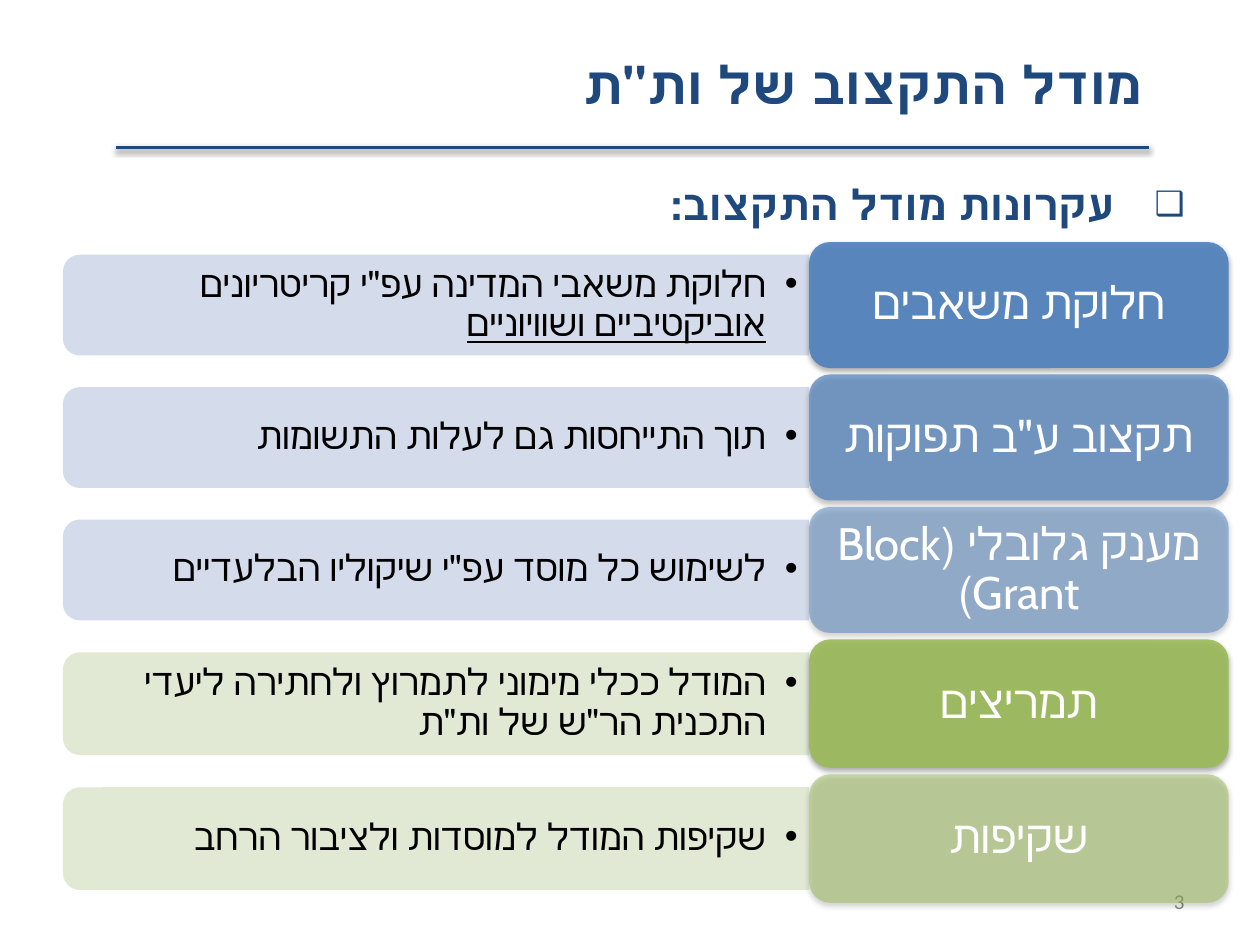
from lxml import etree
from pptx import Presentation
from pptx import util as u
from pptx.dml import color
from pptx.enum import shapes, text
from pptx.oxml import ns

COLORS = {"navy": "1F497D", "blue": "4F81BD", "pale blue": "D0D8E8",
          "green": "9BBB59", "pale green": "DEE7D1",
          "white": "FFFFFF", "black": "000000", "gray": "898989"}


def add_shadow(shape, opacity, distance):
    effects = etree.SubElement(shape._element.spPr, ns.qn("a:effectLst"))
    outer = etree.SubElement(effects, ns.qn("a:outerShdw"), blurRad=str(u.Pt(3.1)),
                             dist=str(u.Pt(distance)), dir="5400000", rotWithShape="0")
    tint = etree.SubElement(outer, ns.qn("a:srgbClr"), val=COLORS["black"])
    etree.SubElement(tint, ns.qn("a:alpha"), val=str(opacity * 1000))


def write(shape, runs, size, ink, align=text.PP_ALIGN.RIGHT, font="Cabin", bold=False,
          rtl=True, bullet=None, bullet_size=100, hang=0, inset=(0.25, 0.13)):
    frame = shape.text_frame
    frame.word_wrap = True
    frame.vertical_anchor = text.MSO_ANCHOR.MIDDLE
    frame.margin_left = frame.margin_right = u.Cm(inset[0])
    frame.margin_top = frame.margin_bottom = u.Cm(inset[1])
    paragraph = frame.paragraphs[0]
    paragraph.alignment = align
    for words in runs:
        run = paragraph.add_run()
        run.text = words
        run.font.name, run.font.size, run.font.bold = font, u.Pt(size), bold
        run.font.color.rgb = color.RGBColor.from_string(COLORS[ink])
    props = paragraph._p.get_or_add_pPr()
    if rtl:
        props.set("rtl", "1")
    if bullet:
        props.set("marL", str(u.Cm(hang)))
        props.set("indent", str(-u.Cm(hang)))
        etree.SubElement(props, ns.qn("a:buSzPct"), val=str(bullet_size * 1000))
        etree.SubElement(props, ns.qn("a:buFont"), typeface="Arial")
        etree.SubElement(props, ns.qn("a:buChar"), char=bullet)
    return paragraph


prs = Presentation()
prs.slide_width, prs.slide_height = u.Cm(25.4), u.Cm(19.05)
slide = prs.slides.add_slide(prs.slide_layouts[6])

# Title and the rule under it
rule = slide.shapes.add_connector(shapes.MSO_CONNECTOR.STRAIGHT,
                                  u.Cm(23.16), u.Cm(2.97), u.Cm(2.34), u.Cm(2.97))
rule.line.color.rgb = color.RGBColor.from_string(COLORS["navy"])
rule.line.width = u.Pt(2)
add_shadow(rule, 38, 1.6)

title = slide.shapes.add_textbox(u.Cm(1.07), u.Cm(1.42), u.Cm(22.22), u.Cm(1.4))
title_line = write(title, ['מודל התקצוב של ות"ת'], 30, "navy", bold=True)
title_line.line_spacing = u.Pt(22)
title.text_frame.vertical_anchor = text.MSO_ANCHOR.TOP

# Heading
heading = slide.shapes.add_textbox(u.Cm(1.27), u.Cm(3.07), u.Cm(22.86), u.Cm(1.57))
heading_line = write(heading, ["עקרונות מודל התקצוב:"], 24, "navy", bold=True,
                     bullet="❑", bullet_size=80, hang=1.42)
heading_line.line_spacing = 1.5
heading_line.space_after = u.Pt(6)

# Slide number
number = slide.shapes.add_textbox(u.Cm(18.21), u.Cm(17.65), u.Cm(5.92), u.Cm(1.02))
write(number, ["3"], 12, "gray", font="Calibri", rtl=False)

# Principles: name, explanation, hue, opacity of the name box, its height
principles = [
    ("חלוקת משאבים", ['חלוקת משאבי המדינה עפ"י קריטריונים ', "אוביקטיביים ושוויוניים"],
     "blue", 90, 2.54),
    ('תקצוב ע"ב תפוקות', ["תוך התייחסות גם לעלות התשומות"], "blue", 70, 2.54),
    ("מענק גלובלי (Block Grant)", ['לשימוש כל מוסד עפ"י שיקוליו הבלעדיים'],
     "blue", 50, 2.54),
    ("תמריצים", ['המודל ככלי מימוני לתמרוץ ולחתירה ליעדי התכנית הר"ש של ות"ת'],
     "green", 90, 2.59),
    ("שקיפות", ["שקיפות המודל למוסדות ולציבור הרחב"], "green", 50, 2.59),
]
BAR_LEFT, BAR_LENGTH, NAME_LEFT, NAME_WIDTH = 1.27, 15.04, 16.31, 8.46
GAP, EDGE = 0.13, 0.13
top = 4.88
for name, explanation, hue, opacity, height in principles:
    middle = top + height / 2
    depth = height * 0.8

    # A quarter turn puts the rounded end of the bar on the left
    bar = slide.shapes.add_shape(
        shapes.MSO_SHAPE.ROUND_2_SAME_RECTANGLE,
        u.Cm(BAR_LEFT + (BAR_LENGTH - depth) / 2), u.Cm(middle - BAR_LENGTH / 2),
        u.Cm(depth), u.Cm(BAR_LENGTH))
    bar.rotation = 270
    bar.shadow.inherit = False

    detail = slide.shapes.add_textbox(u.Cm(1.37), u.Cm(middle - 0.92),
                                      u.Cm(14.94), u.Cm(1.84))
    detail_line = write(detail, explanation, 21, "black", bullet="•", hang=0.64,
                        inset=(0.23, 0.1))
    detail_line.line_spacing = 0.9
    for emphasis in detail_line.runs[1:]:
        emphasis.font.underline = True

    # The name sits in its own text box so that the letters cast no shadow
    name_box = slide.shapes.add_shape(shapes.MSO_SHAPE.ROUNDED_RECTANGLE, u.Cm(NAME_LEFT),
                                      u.Cm(top), u.Cm(NAME_WIDTH), u.Cm(height))
    label = slide.shapes.add_textbox(u.Cm(NAME_LEFT + EDGE), u.Cm(top + EDGE),
                                     u.Cm(NAME_WIDTH - 2 * EDGE), u.Cm(height - 2 * EDGE))
    write(label, [name], 26, "white", align=text.PP_ALIGN.CENTER,
          inset=(0.28, 0.13)).line_spacing = 0.9

    for part, tone, strength in ((bar, "pale " + hue, 90), (name_box, hue, opacity)):
        part.line.fill.background()
        part.fill.solid()
        part.fill.fore_color.rgb = color.RGBColor.from_string(COLORS[tone])
        solid = part._element.spPr.find(ns.qn("a:solidFill"))
        etree.SubElement(solid[0], ns.qn("a:alpha"), val=str(strength * 1000))
    add_shadow(name_box, 35, 1.8)
    top += height + GAP

prs.save("out.pptx")
